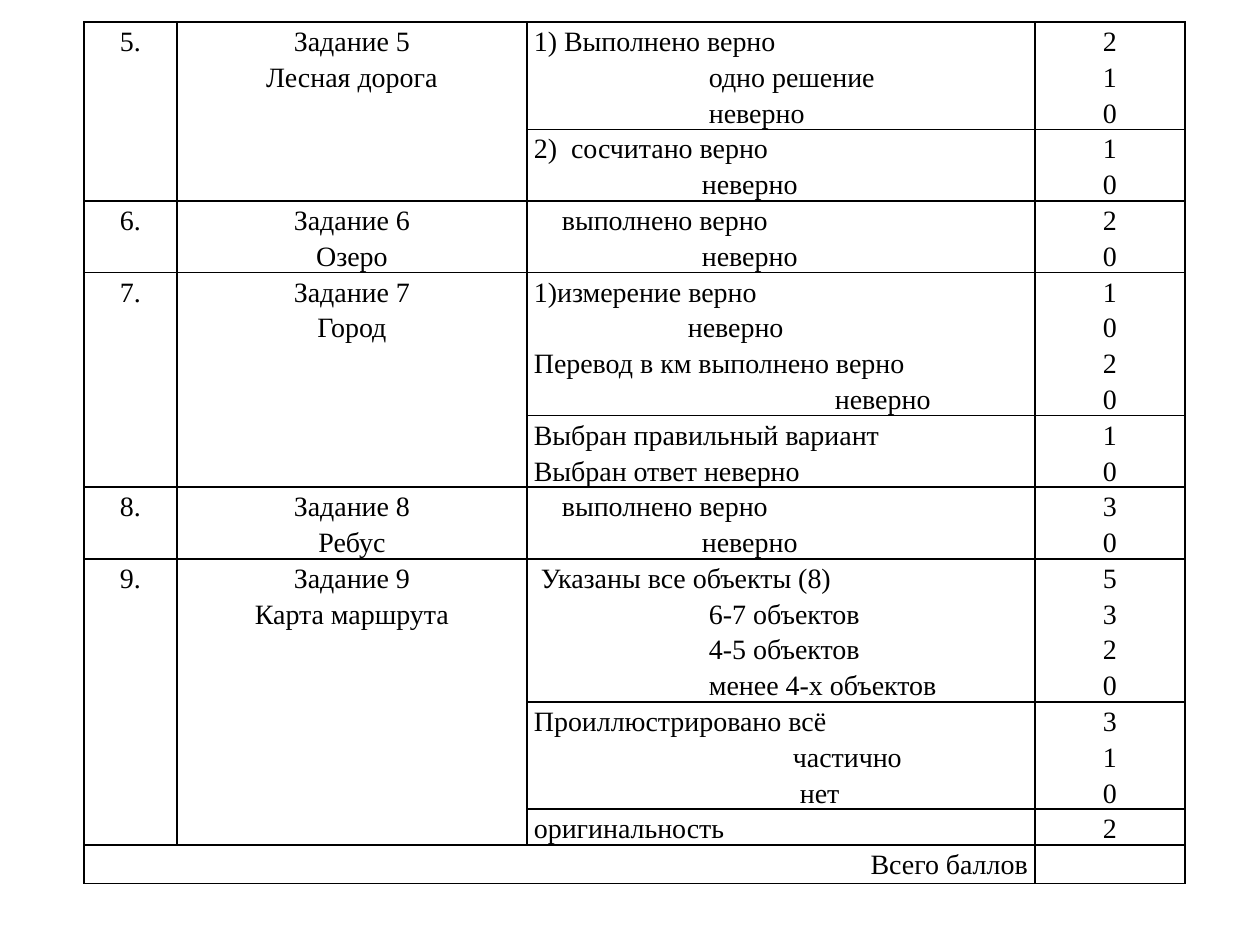
from pptx import Presentation
from pptx.dml.color import RGBColor
from pptx.enum.text import PP_ALIGN
from pptx.oxml import parse_xml
from pptx.oxml.ns import nsdecls
from pptx.util import Pt

BLACK = RGBColor(0, 0, 0)
FONT = "Times New Roman"
PX = 914400 // 126
SPACE = 7  # px, width of one indent step
LINE_HEIGHT = 26
SIDE_MARGIN = 7
LEFT, TOP = 84, 22
COLUMN_WIDTHS = [93, 350, 508, 150]

# number, title, criteria; a criterion is a list of (indent steps, answer, points)
TASKS = [
    ("5.", ["Задание 5", "Лесная дорога"], [
        [(0, "1) Выполнено верно", "2"), (25, "одно решение", "1"), (25, "неверно", "0")],
        [(0, "2)  сосчитано верно", "1"), (24, "неверно", "0")],
    ]),
    ("6.", ["Задание 6", "Озеро"], [
        [(4, "выполнено верно", "2"), (24, "неверно", "0")],
    ]),
    ("7.", ["Задание 7", "Город"], [
        [(0, "1)измерение верно", "1"), (22, "неверно", "0"),
         (0, "Перевод в км выполнено верно", "2"), (43, "неверно", "0")],
        [(0, "Выбран правильный вариант", "1"), (0, "Выбран ответ неверно", "0")],
    ]),
    ("8.", ["Задание 8", "Ребус"], [
        [(4, "выполнено верно", "3"), (24, "неверно", "0")],
    ]),
    ("9.", ["Задание 9", "Карта маршрута"], [
        [(1, "Указаны все объекты (8)", "5"), (25, "6-7 объектов", "3"),
         (25, "4-5 объектов", "2"), (25, "менее 4-х объектов", "0")],
        [(0, "Проиллюстрировано всё", "3"), (37, "частично", "1"), (38, "нет", "0")],
        [(0, "оригинальность", "2")],
    ]),
]
TOTAL = "Всего баллов"


def px(length):
    return length * PX


def write(cell, lines, align=PP_ALIGN.CENTER, indents=None, size=16, color=BLACK):
    """Put one paragraph per line, each indented by its number of steps."""
    frame = cell.text_frame
    for i, line in enumerate(lines):
        paragraph = frame.paragraphs[0] if i == 0 else frame.add_paragraph()
        paragraph.alignment = align
        paragraph.line_spacing = 1.15
        if indents and indents[i]:
            properties = paragraph._p.get_or_add_pPr()
            properties.set("marL", str(px(indents[i] * SPACE)))
            properties.set("indent", "0")
        run = paragraph.add_run()
        run.text = line
        run.font.name = FONT
        run.font.size = Pt(size)
        run.font.color.rgb = color


def style(cell):
    cell.margin_left = cell.margin_right = px(SIDE_MARGIN)
    cell.margin_top = cell.margin_bottom = 0
    properties = cell._tc.get_or_add_tcPr()
    for side in "LRTB":
        properties.append(parse_xml(
            f'<a:ln{side} {nsdecls("a")} w="{Pt(1)}"><a:solidFill>'
            f'<a:srgbClr val="{BLACK}"/></a:solidFill></a:ln{side}>'))
    cell.fill.background()


def main():
    presentation = Presentation()
    presentation.slide_width, presentation.slide_height = px(1260), px(945)
    slide = presentation.slides.add_slide(presentation.slide_layouts[6])

    line_counts = [len(c) for _, _, criteria in TASKS for c in criteria] + [1]
    table = slide.shapes.add_table(
        len(line_counts), len(COLUMN_WIDTHS), px(LEFT), px(TOP),
        px(sum(COLUMN_WIDTHS)), px(sum(line_counts) * LINE_HEIGHT)).table
    table.first_row = table.horz_banding = False
    for column, width in zip(table.columns, COLUMN_WIDTHS):
        column.width = px(width)
    for row, count in zip(table.rows, line_counts):
        row.height = px(count * LINE_HEIGHT)
    for cell in table.iter_cells():
        style(cell)

    row = 0
    for number, title, criteria in TASKS:
        if len(criteria) > 1:
            for column in (0, 1):
                table.cell(row, column).merge(table.cell(row + len(criteria) - 1, column))
        write(table.cell(row, 0), [number])
        write(table.cell(row, 1), title)
        for criterion in criteria:
            indents, answers, points = zip(*criterion)
            write(table.cell(row, 2), answers, align=PP_ALIGN.LEFT, indents=indents)
            write(table.cell(row, 3), points)
            row += 1

    table.cell(row, 0).merge(table.cell(row, 2))
    write(table.cell(row, 0), [TOTAL], align=PP_ALIGN.RIGHT)
    presentation.save("out.pptx")


if __name__ == "__main__":
    main()
